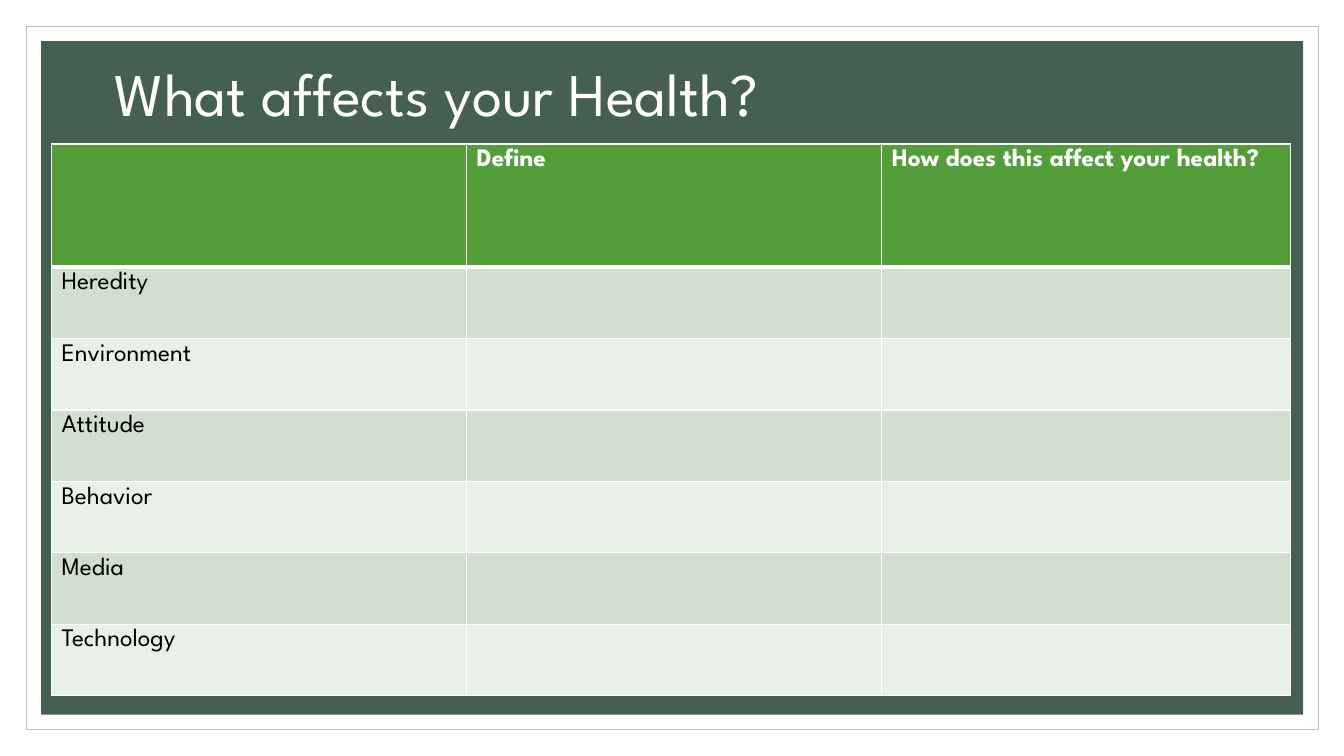
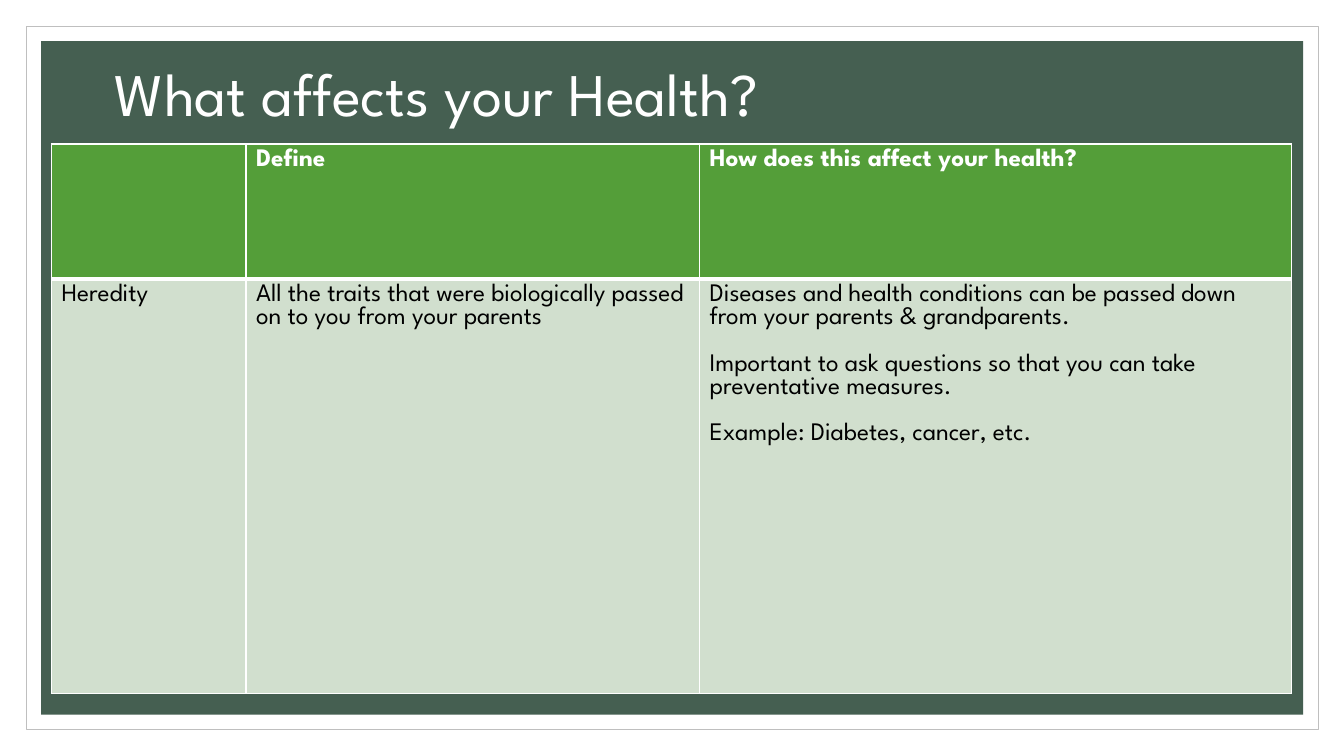
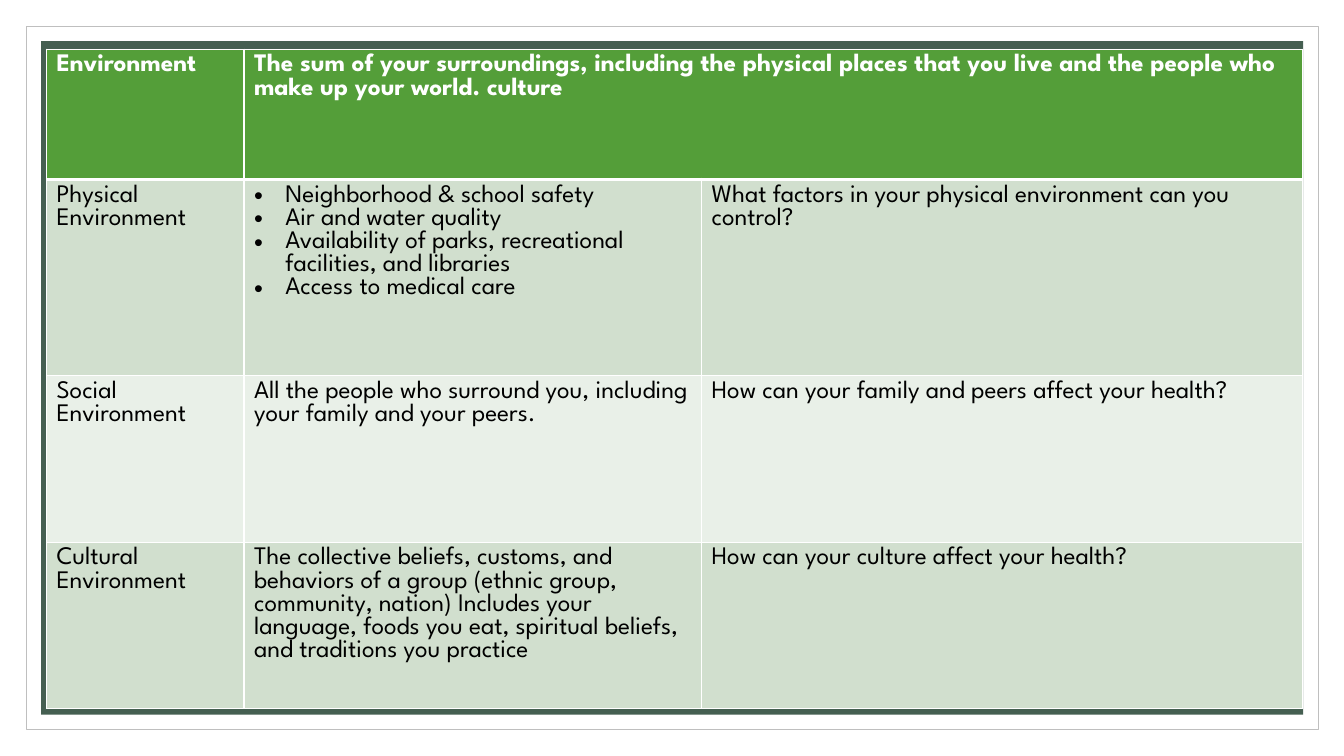
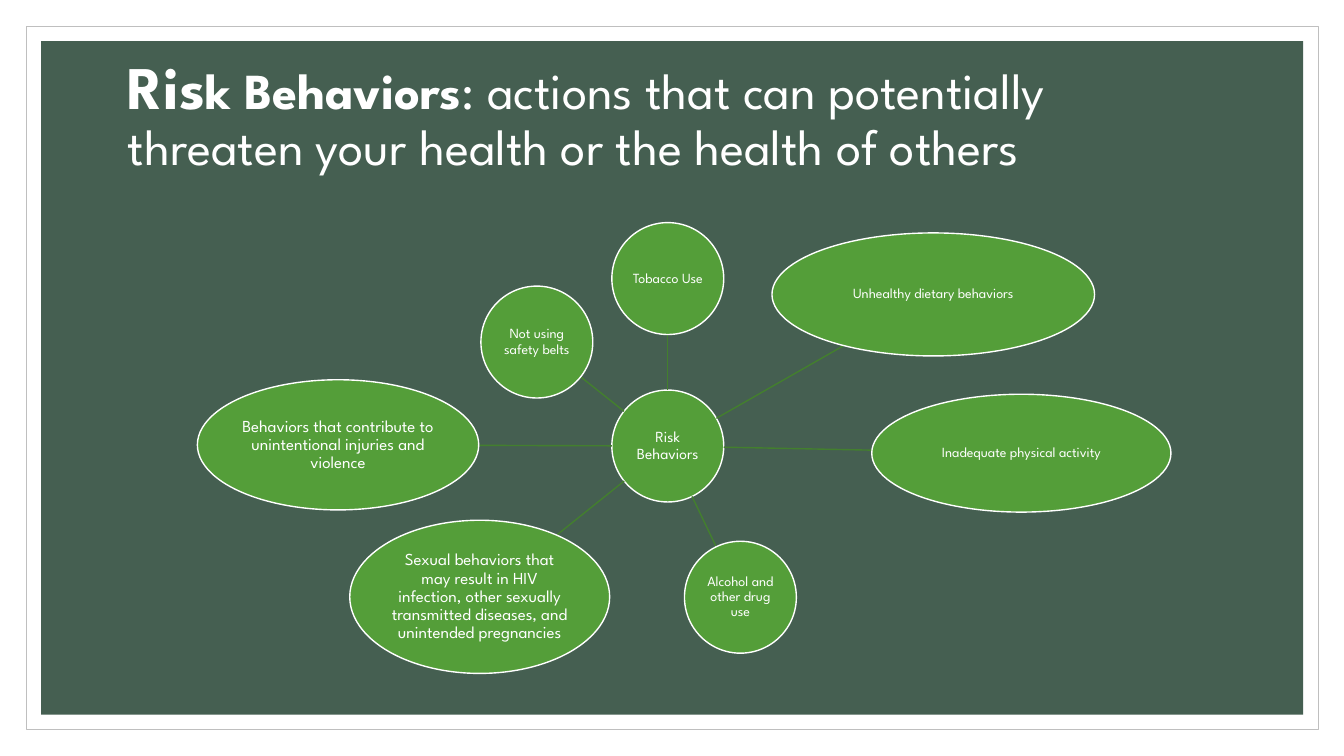
"""Build four slides on what affects your health."""
import math
from dataclasses import dataclass

from lxml import etree
from pptx import Presentation
from pptx import util as u
from pptx.dml.color import RGBColor
from pptx.enum import shapes as es, text as et
from pptx.oxml import ns

Cm, Pt = u.Cm, u.Pt


@dataclass(frozen=True)
class Theme:
    font: str = "League Spartan"
    white: str = "FFFFFF"
    black: str = "000000"
    edge: str = "BFBFBF"
    panel: str = "455F51"
    green: str = "549E39"
    link: str = "437F2E"
    bands: tuple = ("D1DFCE", "E9F0E8")
    title: float = 43.2
    sub: float = 36
    cell: float = 18
    gap: float = 16.5
    big: float = 12
    mid: float = 11
    small: float = 10


T = Theme()

FRAMES = [
    (0.66, 0.66, 32.56, 17.73, T.white, T.edge),
    (1.04, 1.04, 31.8, 16.97, T.panel, None),
]

HEALTH = {"at": (2.64, 1.42), "foot": 1.9,
          "runs": [("What affects your Health?", T.title, False)]}
RISK = {"at": (2.97, 1.78), "foot": 1.6,
        "runs": [("Ris", T.title, True), ("k Behaviors", T.sub, True),
                 (": actions that can potentially threaten your health "
                  "or the health of others", T.sub, False)]}

HEAD = ["", "Define", "How does this affect your health?"]
FACTORS = ["Heredity", "Environment", "Attitude", "Behavior", "Media",
           "Technology"]

GRIDS = [
    {"title": HEALTH, "at": (1.3, 3.63), "cols": [10.46, 10.46, 10.31],
     "rows": [3.1] + [1.8] * len(FACTORS),
     "cells": [HEAD] + [[name, "", ""] for name in FACTORS]},
    {"title": HEALTH, "at": (1.3, 3.63), "cols": [4.9, 11.43, 14.91],
     "rows": [3.4, 10.44],
     "cells": [HEAD, [
         "Heredity",
         "All the traits that were biologically passed on to you from "
         "your parents",
         ["Diseases and health conditions can be passed down from your "
          "parents & grandparents.",
          "Important to ask questions so that you can take preventative "
          "measures.",
          "Example: Diabetes, cancer, etc."]]]},
    {"title": None, "at": (1.17, 1.24), "cols": [4.98, 11.53, 15.14],
     "rows": [3.28, 4.95, 4.19, 4.19],
     "cells": [
         ["Environment",
          "The sum of your surroundings, including the physical places that "
          "you live and the people who make up your world. culture", None],
         ["Physical Environment",
          ("Neighborhood & school safety", "Air and water quality",
           "Availability of parks, recreational facilities, and libraries",
           "Access to medical care"),
          "What factors in your physical environment can you control?"],
         ["Social Environment",
          "All the people who surround you, including your family and your "
          "peers.",
          "How can your family and peers affect your health?"],
         ["Cultural Environment",
          "The collective beliefs, customs, and behaviors of a group (ethnic "
          "group, community, nation) Includes your language, foods you eat, "
          "spiritual beliefs, and traditions you practice",
          "How can your culture affect your health?"]]},
]

DISC = (2.82, 2.82)
HUB = ("Risk Behaviors", (16.83, 11.24), DISC, T.mid)
RISKS = [
    ("Tobacco Use", (16.83, 7.02), DISC, T.small),
    ("Unhealthy dietary behaviors", (23.52, 7.42), (8.13, 3.1), T.small),
    ("Inadequate physical activity", (25.74, 11.42), (7.54, 2.97), T.small),
    ("Alcohol and other drug use", (18.66, 15.05), DISC, T.small),
    ("Sexual behaviors that may result in HIV infection, other sexually "
     "transmitted diseases, and unintended pregnancies",
     (12.09, 15.04), (6.55, 3.86), T.big),
    ("Behaviors that contribute to unintentional injuries and violence",
     (8.52, 11.21), (7.09, 3.28), T.big),
    ("Not using safety belts", (13.53, 8.62), DISC, T.small),
]


def rgb(hue):
    return RGBColor.from_string(hue)


def add_run(para, words, size, hue=T.white, bold=False):
    run = para.add_run()
    run.text = words
    font = run.font
    font.name, font.size, font.bold = T.font, Pt(size), bold
    font.color.rgb = rgb(hue)


def add_form(slide, kind, box, fill, line, width):
    form = slide.shapes.add_shape(kind, *map(Cm, box))
    form.shadow.inherit = False
    form.fill.solid()
    form.fill.fore_color.rgb = rgb(fill)
    if line:
        form.line.color.rgb = rgb(line)
        form.line.width = Pt(width)
    else:
        form.line.fill.background()
    return form


def add_frames(deck, slide):
    tree = deck.slide_master.shapes.element
    for spot, (*box, fill, line) in enumerate(FRAMES, 2):
        form = add_form(slide, es.MSO_SHAPE.RECTANGLE, box, fill, line, 0.5)
        tree.insert(spot, form.element)


def add_slide(deck, title):
    slide = deck.slides.add_slide(deck.slide_layouts[5 if title else 6])
    if title:
        head = slide.shapes.title
        head.left, head.top = map(Cm, title["at"])
        head.width, head.height = Cm(27.94), Cm(3.81)
        frame = head.text_frame
        frame.word_wrap = True
        frame.auto_size = et.MSO_AUTO_SIZE.NONE
        frame.vertical_anchor = et.MSO_ANCHOR.MIDDLE
        frame.margin_bottom = Cm(title["foot"])
        para = frame.paragraphs[0]
        para.alignment = et.PP_ALIGN.LEFT
        para.line_spacing = 0.9
        for words, size, bold in title["runs"]:
            add_run(para, words, size, bold=bold)
    return slide


def set_edges(cell, top, foot):
    props = cell._tc.get_or_add_tcPr()
    for side, width in zip("LRTB", (1, 1, top, foot)):
        line = etree.SubElement(props, ns.qn(f"a:ln{side}"), w=str(Pt(width)))
        fill = etree.SubElement(line, ns.qn("a:solidFill"))
        etree.SubElement(fill, ns.qn("a:srgbClr"), val=T.white)


def set_bullet(para):
    props = para._p.get_or_add_pPr()
    dent = Cm(0.79)
    props.set("marL", str(dent))
    props.set("indent", str(-dent))
    etree.SubElement(props, ns.qn("a:buFont"), typeface="Arial")
    etree.SubElement(props, ns.qn("a:buChar"), char="•")


def fill_cell(cell, item, row):
    head = row == 0
    set_edges(cell, 3 if row == 1 else 1, 3 if head else 1)
    cell.fill.solid()
    cell.fill.fore_color.rgb = rgb(T.green if head else T.bands[(row - 1) % 2])
    if not item:
        return
    frame = cell.text_frame
    parts = [item] if isinstance(item, str) else item
    for spot, words in enumerate(parts):
        para = frame.add_paragraph() if spot else frame.paragraphs[0]
        if isinstance(item, tuple):
            set_bullet(para)
        elif spot:
            para.space_before = Pt(T.gap)
        add_run(para, words, T.cell, T.white if head else T.black, head)


def add_grid(slide, grid):
    cols, rows = grid["cols"], grid["rows"]
    table = slide.shapes.add_table(
        len(rows), len(cols), *map(Cm, grid["at"]),
        Cm(sum(cols)), Cm(sum(rows))).table
    table.first_row = table.horz_banding = False
    for col, width in zip(table.columns, cols):
        col.width = Cm(width)
    for row, high in zip(table.rows, rows):
        row.height = Cm(high)
    for r, line in enumerate(grid["cells"]):
        for c, item in enumerate(line):
            fill_cell(table.cell(r, c), item, r)
            if item is None:
                table.cell(r, c - 1).merge(table.cell(r, c))


def add_node(slide, node):
    words, (x, y), (w, h), size = node
    form = add_form(slide, es.MSO_SHAPE.OVAL, (x - w / 2, y - h / 2, w, h),
                    T.green, T.white, 1)
    frame = form.text_frame
    frame.word_wrap = True
    frame.vertical_anchor = et.MSO_ANCHOR.MIDDLE
    frame.margin_left = frame.margin_right = Cm(0.03)
    frame.margin_top = frame.margin_bottom = Cm(0.03)
    para = frame.paragraphs[0]
    para.alignment = et.PP_ALIGN.CENTER
    para.line_spacing = 0.9
    add_run(para, words, size)


def find_rim(node, goal):
    (x, y), (w, h) = node[1:3]
    dx, dy = goal[1][0] - x, goal[1][1] - y
    part = 1 / math.hypot(dx / (w / 2), dy / (h / 2))
    return Cm(x + dx * part), Cm(y + dy * part)


def add_link(slide, node):
    link = slide.shapes.add_connector(
        es.MSO_CONNECTOR.STRAIGHT, *find_rim(HUB, node), *find_rim(node, HUB))
    link.line.color.rgb = rgb(T.link)
    link.line.width = Pt(1)
    etree.SubElement(link.element.spPr, ns.qn("a:effectLst"))


def main():
    deck = Presentation()
    deck.slide_width, deck.slide_height = Cm(33.87), Cm(19.05)
    for grid in GRIDS:
        add_grid(add_slide(deck, grid["title"]), grid)
    slide = add_slide(deck, RISK)
    add_frames(deck, slide)
    add_node(slide, HUB)
    for node in RISKS:
        add_link(slide, node)
        add_node(slide, node)
    deck.save("out.pptx")


if __name__ == "__main__":
    main()
